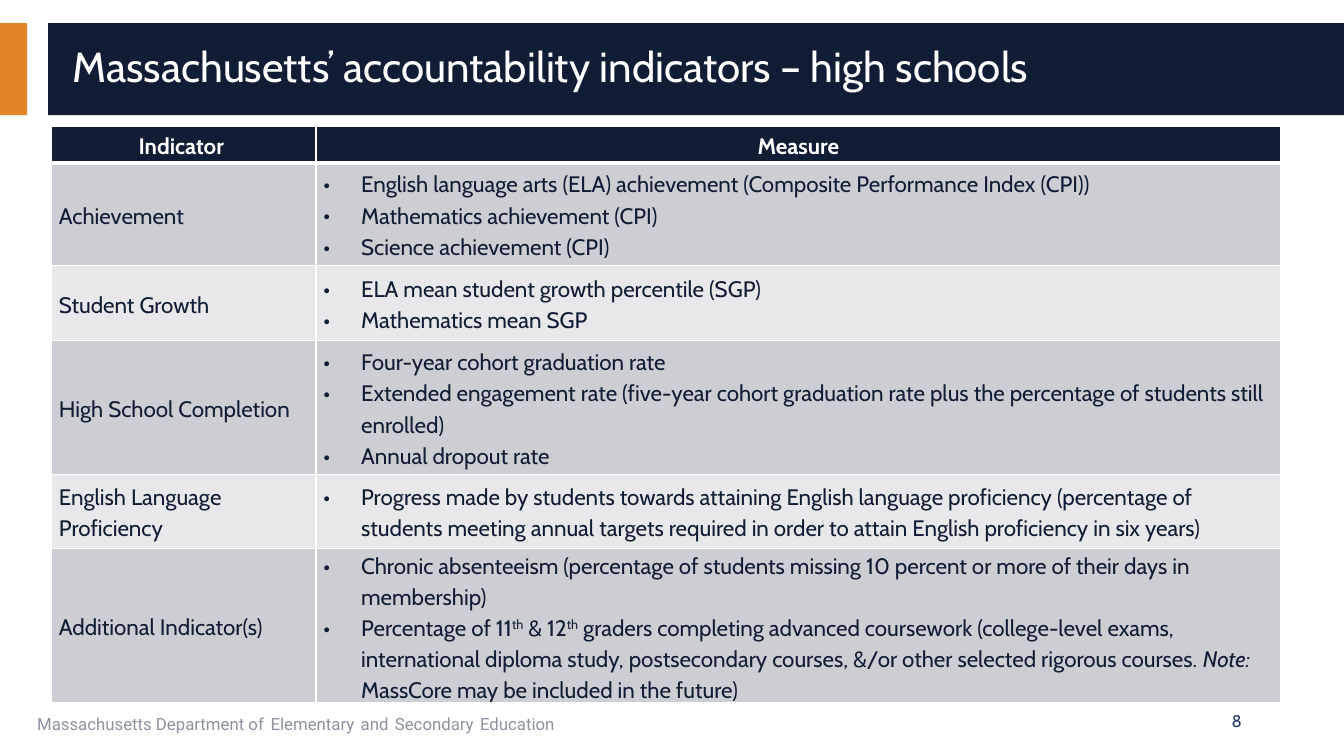
from dataclasses import dataclass

from lxml import etree
from pptx import Presentation
from pptx.dml.color import RGBColor
from pptx.enum.shapes import MSO_SHAPE
from pptx.enum.text import MSO_ANCHOR, PP_ALIGN
from pptx.oxml.ns import qn
from pptx.util import Pt

RECTANGLE = MSO_SHAPE.RECTANGLE
TOP, MIDDLE = MSO_ANCHOR.TOP, MSO_ANCHOR.MIDDLE
LEFT, CENTER, RIGHT = PP_ALIGN.LEFT, PP_ALIGN.CENTER, PP_ALIGN.RIGHT


@dataclass(frozen=True)
class Theme:
    navy: str = "101D35"
    orange: str = "E38526"
    white: str = "FFFFFF"
    dark_band: str = "CDCED4"
    light_band: str = "E8E8EB"
    footer_gray: str = "8D92A1"
    number_blue: str = "203B6A"
    font: str = "Cabin"
    footer_font: str = "Roboto"
    title_size: float = 30
    table_size: float = 16
    footer_size: float = 12
    footer_gap_size: float = 18


THEME = Theme()
SUPERSCRIPT = {"baseline": 30000}

HEADINGS = ["Indicator ", "Measure"]
INDICATORS = [
    (["Achievement"], [
        "English language arts (ELA) achievement (Composite Performance Index (CPI))",
        "Mathematics achievement (CPI)",
        "Science achievement (CPI)",
    ]),
    (["Student Growth"], [
        "ELA mean student growth percentile (SGP)",
        "Mathematics mean SGP",
    ]),
    (["High School Completion"], [
        "Four-year cohort graduation rate",
        "Extended engagement rate (five-year cohort graduation rate plus the "
        "percentage of students still enrolled)",
        "Annual dropout rate",
    ]),
    (["English Language", "Proficiency"], [
        "Progress made by students towards attaining English language proficiency "
        "(percentage of students meeting annual targets required in order to attain "
        "English proficiency in six years)",
    ]),
    (["Additional Indicator(s)"], [
        "Chronic absenteeism (percentage of students missing 10 percent or more of "
        "their days in membership)",
        [
            ("Percentage of 11", {}), ("th", SUPERSCRIPT),
            (" & 12", {}), ("th", SUPERSCRIPT),
            (" graders completing advanced coursework (college-level exams, "
             "international diploma study, postsecondary courses, &/or other "
             "selected rigorous courses. ", {}),
            ("Note: ", {"italic": True}),
            ("MassCore may be included in the future)", {}),
        ],
    ]),
]
COLUMN_WIDTHS = [188.9, 689]
ROW_HEIGHTS = [26, 73.2, 54, 95.2, 53.2, 96.6]


def add_bullet(paragraph):
    properties = paragraph._p.get_or_add_pPr()
    properties.set("marL", str(Pt(27)))
    properties.set("indent", str(Pt(-27)))
    etree.SubElement(properties, qn("a:buFont"), typeface=THEME.font)
    etree.SubElement(properties, qn("a:buChar"), char="•")
    tabs = etree.SubElement(properties, qn("a:tabLst"))
    etree.SubElement(tabs, qn("a:tab"), pos=str(Pt(26)), algn="l")


def write(frame, paragraphs, *, size, color, font=THEME.font, bold=False,
          align=LEFT, spacing=1.0, bullet=False):
    for index, content in enumerate(paragraphs):
        paragraph = frame.paragraphs[0] if index == 0 else frame.add_paragraph()
        if bullet:
            add_bullet(paragraph)
        paragraph.alignment = align
        paragraph.line_spacing = spacing
        pieces = [(content, {})] if isinstance(content, str) else content
        for words, style in pieces:
            run = paragraph.add_run()
            run.text = words
            run.font.name = font
            run.font.size = Pt(style.get("size", size))
            run.font.color.rgb = RGBColor.from_string(style.get("color", color))
            run.font.bold = bold
            run.font.italic = style.get("italic", False)
            if "baseline" in style:
                run._r.get_or_add_rPr().set("baseline", str(style["baseline"]))


def add_text(slide, box, paragraphs, *, anchor=MIDDLE, **style):
    frame = slide.shapes.add_textbox(*map(Pt, box)).text_frame
    frame.word_wrap = True
    frame.vertical_anchor = anchor
    write(frame, paragraphs, **style)


def add_block(slide, box, color):
    block = slide.shapes.add_shape(RECTANGLE, *map(Pt, box))
    block.shadow.inherit = False
    block.fill.solid()
    block.fill.fore_color.rgb = RGBColor.from_string(color)
    block.line.fill.background()


def add_header(slide, box):
    left, top, width, height = box
    accent_width, banner_left = 19.5, 34.4
    add_block(slide, (left, top, accent_width, height), THEME.orange)
    add_block(slide, (left + banner_left, top, width - banner_left, height), THEME.navy)
    add_text(slide, (left + 44.6, top + 6.2, 895.7, height - 12.2),
             ["Massachusetts’ accountability indicators – high schools"],
             size=THEME.title_size, color=THEME.white, spacing=0.9)


def add_footer(slide, box):
    left, top, width, height = box
    gap = (" ", {"size": THEME.footer_gap_size, "color": THEME.number_blue})
    department = [("Massachusetts Department of", {})]
    for word in ("Elementary", "and", "Secondary", "Education"):
        department += [gap, (word, {})]
    add_text(slide, (left, top, 607.7, height), [department], anchor=TOP,
             size=THEME.footer_size, color=THEME.footer_gray, font=THEME.footer_font)
    number_width = 216
    add_text(slide, (left + width - number_width, top, number_width, height), ["8"],
             size=THEME.footer_size, color=THEME.number_blue, align=RIGHT)


def add_borders(cell, **widths):
    properties = cell._tc.get_or_add_tcPr()
    for side in "LRTB":
        line = etree.SubElement(properties, qn(f"a:ln{side}"), w=str(Pt(widths.get(side, 1))))
        fill = etree.SubElement(line, qn("a:solidFill"))
        etree.SubElement(fill, qn("a:srgbClr"), val=THEME.white)


def fill_cell(cell, paragraphs, fill, borders, **style):
    add_borders(cell, **borders)
    cell.fill.solid()
    cell.fill.fore_color.rgb = RGBColor.from_string(fill)
    cell.margin_left = cell.margin_right = Pt(5.2)
    cell.margin_top = cell.margin_bottom = 0
    cell.vertical_anchor = MIDDLE
    write(cell.text_frame, paragraphs, size=THEME.table_size, spacing=1.15, **style)


def add_indicator_table(slide, box):
    table = slide.shapes.add_table(
        len(INDICATORS) + 1, len(HEADINGS), *map(Pt, box)).table
    table.horz_banding = False
    for column, width in zip(table.columns, COLUMN_WIDTHS):
        column.width = Pt(width)
    for row, height in zip(table.rows, ROW_HEIGHTS):
        row.height = Pt(height)
    for column, heading in enumerate(HEADINGS):
        fill_cell(table.cell(0, column), [heading], THEME.navy, {"B": 3},
                  color=THEME.white, bold=True, align=CENTER)
    for row, (indicator, measures) in enumerate(INDICATORS, start=1):
        band = THEME.dark_band if row % 2 else THEME.light_band
        borders = {"T": 3} if row == 1 else {}
        fill_cell(table.cell(row, 0), indicator, band, borders, color=THEME.navy)
        fill_cell(table.cell(row, 1), measures, band, borders,
                  color=THEME.navy, bullet=True)


def main():
    deck = Presentation()
    deck.slide_width, deck.slide_height = Pt(960), Pt(540)
    slide = deck.slides.add_slide(deck.slide_layouts[6])
    add_header(slide, (0, 16.6, 960, 65.6))
    add_footer(slide, (19.5, 500.4, 874.7, 29))
    add_indicator_table(slide, (36.9, 90.3, sum(COLUMN_WIDTHS), sum(ROW_HEIGHTS)))
    deck.save("out.pptx")


if __name__ == "__main__":
    main()
